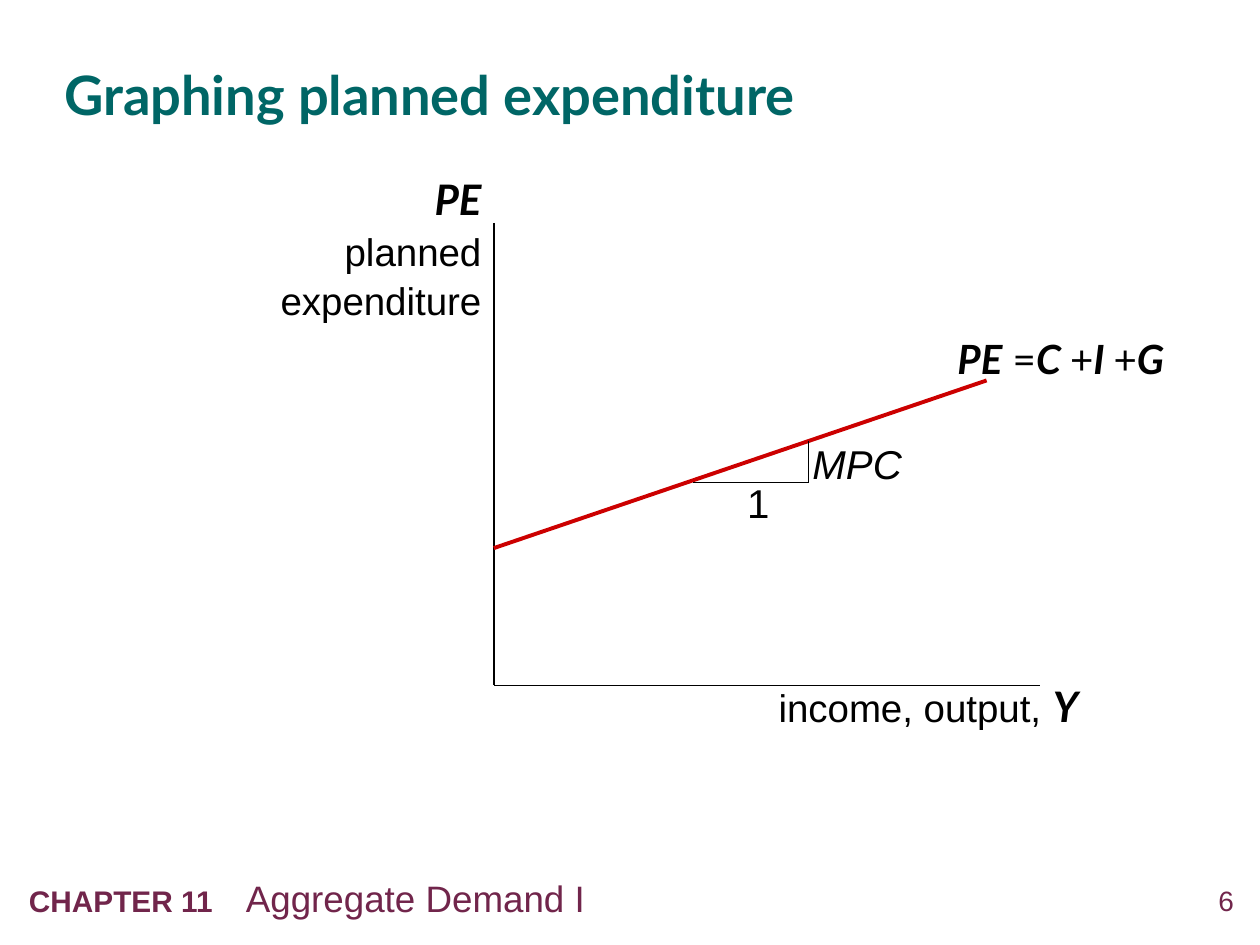
"""Build a slide that graphs planned expenditure against income."""
import lxml.etree
import pptx
import pptx.dml.color
import pptx.enum.shapes
import pptx.enum.text
import pptx.oxml.ns
import pptx.util

Pt = pptx.util.Pt
ALIGN = pptx.enum.text.PP_ALIGN
BLACK, PLUM, TEAL, RED = "000000", "71254B", "006666", "CC0000"
SYMBOL = dict(font="Lato", bold=True, italic=True)


def rgb(value):
    return pptx.dml.color.RGBColor.from_string(value)


def write(para, text, size, font="Arial", color=BLACK, bold=False, italic=False):
    span = para.add_run()
    span.text = text
    span.font.size = Pt(size)
    span.font.name = font
    span.font.color.rgb = rgb(color)
    span.font.bold = bold
    span.font.italic = italic


deck = pptx.Presentation()
deck.slide_width, deck.slide_height = Pt(720), Pt(540)
page = deck.slides.add_slide(deck.slide_layouts[5])

title = page.shapes.title
title.left, title.top, title.width, title.height = Pt(36.7), Pt(18.7), Pt(649.4), Pt(74.2)
frame = title.text_frame
frame.margin_left = frame.margin_top = frame.margin_right = frame.margin_bottom = 0
frame.vertical_anchor = pptx.enum.text.MSO_ANCHOR.MIDDLE
frame.paragraphs[0].alignment = ALIGN.LEFT
frame.paragraphs[0].line_spacing = 0.9
write(frame.paragraphs[0], "Graphing planned expenditure", 31, font="Lato", color=TEAL, bold=True)

origin_x, origin_y = 282.2, 391.7
step_x, step_y = 462.2, 275.8
lines = [
    (origin_x, 127.4, origin_x, origin_y, BLACK, 1),
    (origin_x, origin_y, 594, origin_y, BLACK, 1),
    (origin_x, 313.2, 563.8, 217.4, RED, 2.25),
    (396, step_y, step_x, step_y, BLACK, 0.75),
    (step_x, step_y, step_x, 252, BLACK, 0.75),
]
for x1, y1, x2, y2, color, width in lines:
    line = page.shapes.add_connector(
        pptx.enum.shapes.MSO_CONNECTOR.STRAIGHT, Pt(x1), Pt(y1), Pt(x2), Pt(y2))
    line.line.color.rgb = rgb(color)
    line.line.width = Pt(width)
    lxml.etree.SubElement(line._element.spPr, pptx.oxml.ns.qn("a:effectLst"))

plain = dict(size=23)
symbol = dict(size=23, **SYMBOL)
sign = dict(size=23, font="Lato")
chapter = dict(size=17, color=PLUM, bold=True)
labels = [
    ((437.8, 385.2, 203.8, 36), ALIGN.LEFT, [
        [("income, output,", dict(size=22)), (" ", dict(size=24)), ("Y", dict(size=24, **SYMBOL))]]),
    ((121.7, 95.8, 160.5, 92.2), ALIGN.RIGHT, [
        [("PE", dict(size=24, **SYMBOL))],
        [("planned", dict(size=22))],
        [("expenditure", dict(size=22))]]),
    ((540, 187.2, 162, 34.6), ALIGN.LEFT, [
        [("PE", symbol), (" =", sign), ("C ", symbol), ("+", sign),
         ("I ", symbol), ("+", sign), ("G", symbol)]]),
    ((457.2, 247.7, 72, 34.6), ALIGN.LEFT, [[("MPC", dict(size=23, italic=True))]]),
    ((419.8, 270, 30.2, 34.6), ALIGN.LEFT, [[("1", plain)]]),
    ((9.4, 496.8, 589, 32.4), ALIGN.LEFT, [
        [("CHAPTER 11\t", chapter), ("Aggregate Demand I", dict(size=21, color=PLUM))]]),
    ((658.1, 501.1, 54, 30.2), ALIGN.RIGHT, [[("6", dict(size=16, color=PLUM))]]),
]
for place, alignment, paragraphs in labels:
    box = page.shapes.add_textbox(*[Pt(length) for length in place])
    box.text_frame.word_wrap = True
    for index, spans in enumerate(paragraphs):
        para = box.text_frame.add_paragraph() if index else box.text_frame.paragraphs[0]
        para.alignment = alignment
        para.space_before = Pt(2 if index else 0)
        for text, style in spans:
            write(para, text, **style)
            if "\t" in text:
                tabs = lxml.etree.SubElement(para._p.get_or_add_pPr(), pptx.oxml.ns.qn("a:tabLst"))
                lxml.etree.SubElement(
                    tabs, pptx.oxml.ns.qn("a:tab"), pos=str(int(Pt(124))), algn="l")

deck.save("out.pptx")
